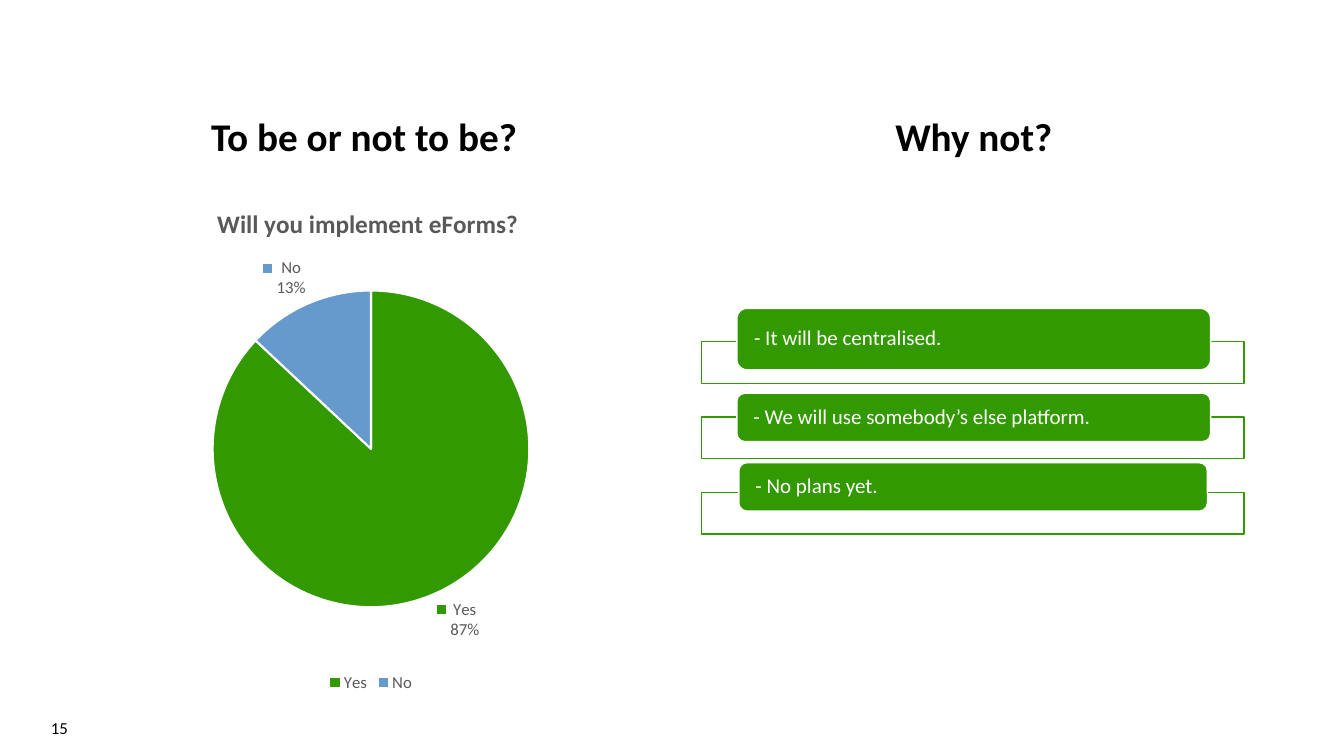
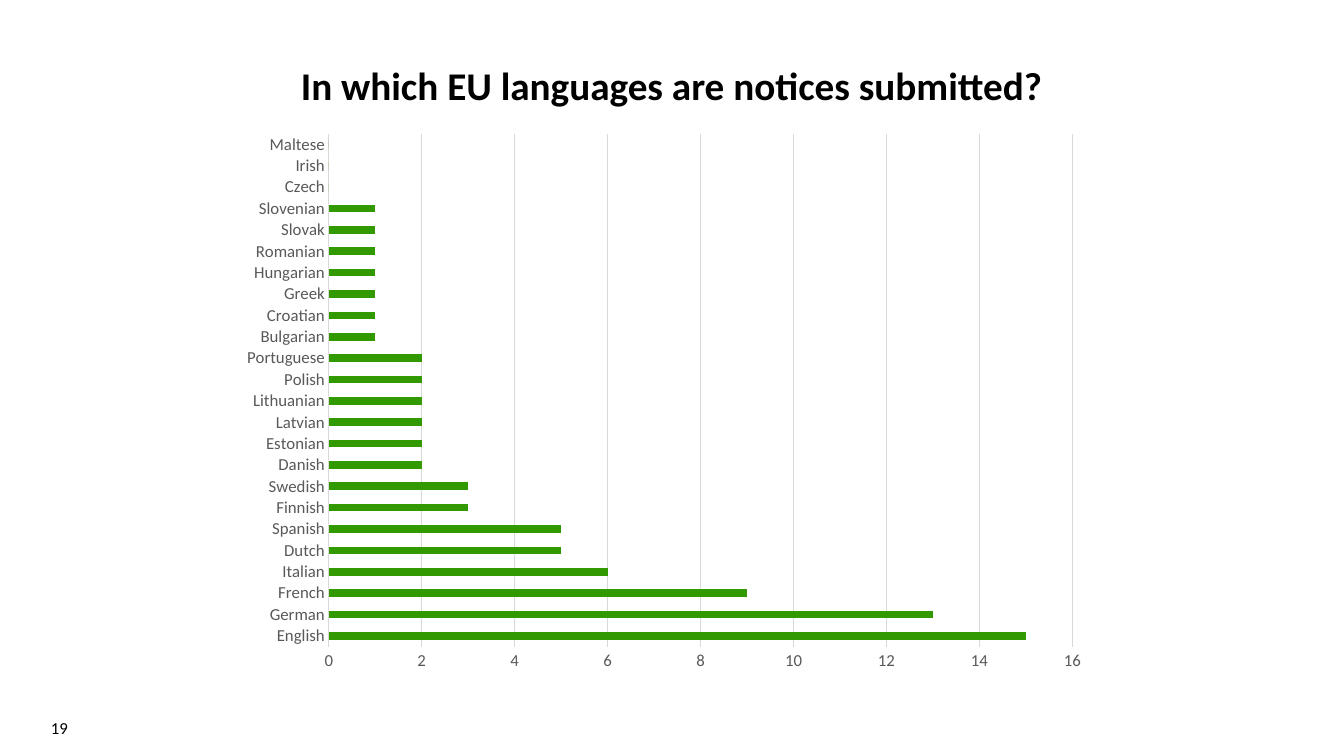
"""Build two survey result slides about eForms and notice languages."""
from pptx import Presentation
from pptx.chart import data as chart_data
from pptx.dml.color import RGBColor
from pptx.enum import chart as charts, shapes, text as texts
from pptx.oxml import parse_xml
from pptx.oxml import ns
from pptx.util import Cm, Pt

BLACK = RGBColor(0x00, 0x00, 0x00)
WHITE = RGBColor(0xFF, 0xFF, 0xFF)
GREEN = RGBColor(0x33, 0x99, 0x00)
BLUE = RGBColor(0x66, 0x99, 0xCC)
GREY = RGBColor(0x59, 0x59, 0x59)
PALE_GREY = RGBColor(0xD9, 0xD9, 0xD9)
FONT = "Calibri"

FRAME_LEFT, FRAME_TOP, FRAME_WIDTH, FRAME_HEIGHT = 17.68, 8.61, 13.67, 1.05
FRAME_STEP = 1.9
REASONS = [
    ("- It will be centralised.", (18.57, 7.77, 11.94, 1.55)),
    ("- We will use somebody’s else platform.", (18.57, 9.91, 11.94, 1.22)),
    ("- No plans yet.", (18.62, 11.66, 11.81, 1.22)),
]
NOTICES = {
    "English": 15, "German": 13, "French": 9, "Italian": 6, "Dutch": 5,
    "Spanish": 5, "Finnish": 3, "Swedish": 3, "Danish": 2, "Estonian": 2,
    "Latvian": 2, "Lithuanian": 2, "Polish": 2, "Portuguese": 2,
    "Bulgarian": 1, "Croatian": 1, "Greek": 1, "Hungarian": 1,
    "Romanian": 1, "Slovak": 1, "Slovenian": 1, "Czech": 0, "Irish": 0,
    "Maltese": 0,
}


def style_font(font, size, color, bold=False):
    """Set the typeface, size, colour and weight of a font."""
    font.name, font.size, font.bold = FONT, Pt(size), bold
    font.color.rgb = color


def write_text(frame, text, size=12, color=BLACK, bold=False, align=None,
               anchor=texts.MSO_ANCHOR.MIDDLE, spacing=None, insets=None):
    """Fill a text frame with one formatted paragraph."""
    frame.word_wrap = True
    frame.vertical_anchor = anchor
    if insets:
        (frame.margin_left, frame.margin_top,
         frame.margin_right, frame.margin_bottom) = map(Cm, insets)
    para = frame.paragraphs[0]
    para.alignment, para.line_spacing = align, spacing
    span = para.add_run()
    span.text = text
    style_font(span.font, size, color, bold)


def add_title(page, text, *place):
    """Add a bold centred heading that sits on the bottom of its box."""
    box = page.shapes.add_textbox(*map(Cm, place))
    write_text(box.text_frame, text, size=28, bold=True, spacing=0.9,
               align=texts.PP_ALIGN.CENTER, anchor=texts.MSO_ANCHOR.BOTTOM,
               insets=(0, 0.13, 0, 0))


def add_page(deck, number):
    """Add a blank page with its number in the lower left corner."""
    page = deck.slides.add_slide(deck.slide_layouts[6])
    box = page.shapes.add_textbox(Cm(0), Cm(17.83), Cm(1.96), Cm(1.02))
    write_text(box.text_frame, str(number), align=texts.PP_ALIGN.RIGHT)
    return page


def add_block(page, kind, place, fill, line):
    """Add a filled and outlined shape without a shadow."""
    block = page.shapes.add_shape(kind, *map(Cm, place))
    block.shadow.inherit = False
    block.fill.solid()
    block.fill.fore_color.rgb = fill
    block.line.color.rgb = line
    block.line.width = Pt(1)
    return block


def add_reasons(page):
    """Add the stack of label bars, each over an outlined frame."""
    for row, (reason, place) in enumerate(REASONS):
        frame = (FRAME_LEFT, FRAME_TOP + row * FRAME_STEP,
                 FRAME_WIDTH, FRAME_HEIGHT)
        add_block(page, shapes.MSO_SHAPE.RECTANGLE, frame, WHITE, GREEN)
        label = add_block(page, shapes.MSO_SHAPE.ROUNDED_RECTANGLE, place,
                          GREEN, WHITE)
        write_text(label.text_frame, reason, size=15, color=WHITE,
                   align=texts.PP_ALIGN.LEFT, spacing=0.9,
                   insets=(0.36, 0, 0.36, 0))


def add_chart(page, kind, place, values):
    """Add a chart of one series and return it."""
    source = chart_data.CategoryChartData()
    source.categories = list(values)
    source.add_series("Series 1", list(values.values()))
    chart = page.shapes.add_chart(kind, *map(Cm, place), source).chart
    style_font(chart.font, 12, GREY)
    return chart


def find_part(chart, route):
    """Return the first XML element of a chart on a route."""
    return chart.element.xpath(route)[0]


def place_part(part, index, target="", **sizes):
    """Give a chart part a fixed place in fractions of the chart."""
    for old in part.findall(ns.qn("c:layout")):
        part.remove(old)
    inner = f'<c:layoutTarget val="{target}"/>' if target else ""
    modes = '<c:xMode val="edge"/><c:yMode val="edge"/>'
    numbers = "".join(f'<c:{name} val="{size}"/>'
                      for name, size in sizes.items())
    part.insert(index, parse_xml(
        f'<c:layout {ns.nsdecls("c")}><c:manualLayout>'
        f'{inner}{modes}{numbers}</c:manualLayout></c:layout>'))


def add_answer_pie(page):
    """Add the pie of yes and no answers."""
    chart = add_chart(page, charts.XL_CHART_TYPE.PIE,
                      (1.96, 4.42, 14.78, 13.13), {"Yes": 87, "No": 13})
    chart.has_title = True
    write_text(chart.chart_title.text_frame, "Will you implement eForms?",
               size=18, color=GREY, bold=True)
    place_part(find_part(chart, "c:chart/c:title"), 1, x=0.23, y=0.05)
    place_part(find_part(chart, "c:chart/c:plotArea"), 0, "inner",
               x=0.23, y=0.22, w=0.54, h=0.61)
    chart.has_legend = True
    chart.legend.position = charts.XL_LEGEND_POSITION.BOTTOM
    chart.legend.include_in_layout = False
    style_font(chart.legend.font, 12, GREY)

    chart.plots[0].vary_by_categories = True
    series = chart.plots[0].series[0]
    for index, color in enumerate((GREEN, BLUE)):
        piece = series.points[index].format
        piece.fill.solid()
        piece.fill.fore_color.rgb = color
        piece.line.color.rgb = WHITE
        piece.line.width = Pt(1.5)
    labels = series.data_labels
    labels.show_value = False
    labels.show_percentage = True
    labels.show_category_name = True
    labels.show_legend_key = True
    labels.number_format, labels.number_format_is_linked = "0%", False
    labels.position = charts.XL_LABEL_POSITION.OUTSIDE_END
    style_font(labels.font, 12, GREY)
    last_switch = find_part(
        chart, ".//c:ser/c:dLbls/*[self::c:showPercent"
               " or self::c:showBubbleSize][last()]")
    last_switch.addnext(parse_xml(
        f'<c:separator {ns.nsdecls("c")}>\n</c:separator>'))


def add_language_bars(page):
    """Add the bars of notices for each language."""
    chart = add_chart(page, charts.XL_CHART_TYPE.BAR_CLUSTERED,
                      (5.89, 3.23, 21.79, 14.2), NOTICES)
    chart.has_title = False
    chart.has_legend = False
    place_part(find_part(chart, "c:chart/c:plotArea"), 0, "inner",
               x=0.11, y=0.01, w=0.86, h=0.91)
    plot = chart.plots[0]
    plot.vary_by_categories = False
    plot.gap_width = 182
    fill = plot.series[0].format.fill
    fill.solid()
    fill.fore_color.rgb = GREEN

    for axis in (chart.category_axis, chart.value_axis):
        axis.major_tick_mark = charts.XL_TICK_MARK.NONE
        axis.minor_tick_mark = charts.XL_TICK_MARK.NONE
        style_font(axis.tick_labels.font, 12, GREY)
    scale = chart.value_axis
    scale.minimum_scale, scale.maximum_scale, scale.major_unit = 0, 16, 2
    scale.has_major_gridlines = True
    scale.format.line.fill.background()
    for line in (chart.category_axis.format.line,
                 scale.major_gridlines.format.line):
        line.color.rgb = PALE_GREY
        line.width = Pt(0.75)


def main():
    """Build and save the deck."""
    deck = Presentation()
    deck.slide_width, deck.slide_height = Cm(33.87), Cm(19.05)

    page = add_page(deck, 15)
    add_title(page, "To be or not to be?", 2.34, 0.36, 13.67, 3.68)
    add_title(page, "Why not?", 17.15, 0.36, 14.78, 3.68)
    add_answer_pie(page)
    add_reasons(page)

    page = add_page(deck, 19)
    add_title(page, "In which EU languages are notices submitted?",
              2.34, 1.24, 29.16, 1.5)
    add_language_bars(page)
    deck.save("out.pptx")


if __name__ == "__main__":
    main()
